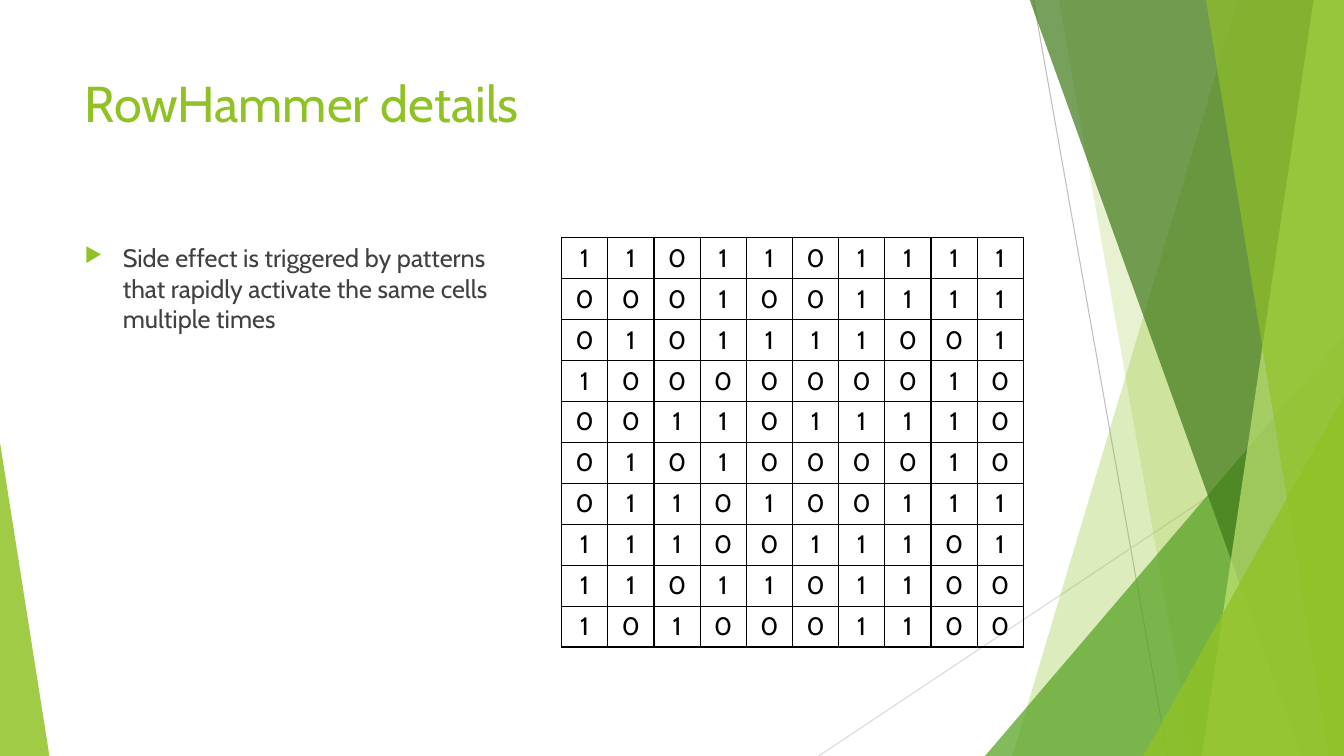
from lxml import etree
from pptx import Presentation
from pptx.dml.color import RGBColor
from pptx.enum.shapes import MSO_CONNECTOR, MSO_SHAPE
from pptx.enum.text import MSO_ANCHOR, PP_ALIGN
from pptx.oxml.ns import qn
from pptx.util import Inches, Pt

STRAIGHT = MSO_CONNECTOR.STRAIGHT
TRIANGLE = MSO_SHAPE.ISOSCELES_TRIANGLE
TOP = MSO_ANCHOR.TOP
LEFT, CENTER = PP_ALIGN.LEFT, PP_ALIGN.CENTER

LIME = RGBColor(0x90, 0xC2, 0x26)
GREEN = RGBColor(0x54, 0xA0, 0x21)
FOREST = RGBColor(0x3F, 0x78, 0x19)
PALE = RGBColor(0xC0, 0xE4, 0x74)
GRAY = RGBColor(0xBF, 0xBF, 0xBF)
LIGHT_GRAY = RGBColor(0xD9, 0xD9, 0xD9)
DARK = RGBColor(0x40, 0x40, 0x40)
BLACK = RGBColor(0, 0, 0)

WIDTH, HEIGHT = 13.33, 7.5
BITS = [
    "1101101111",
    "0001001111",
    "0101111001",
    "1000000010",
    "0011011110",
    "0101000010",
    "0110100111",
    "1110011101",
    "1101101100",
    "1010001100",
]


class SlideBuilder:
    font = "Cabin"

    def __init__(self, slide):
        self.slide = slide
        self.shapes = slide.shapes

    def place(self, sp, x, y, w, h):
        sp.left, sp.top, sp.width, sp.height = map(Inches, (x, y, w, h))

    def run(self, p, text, size, color):
        r = p.add_run()
        r.text = text
        r.font.name = self.font
        r.font.size = Pt(size)
        r.font.color.rgb = color

    def paint(self, sp, color, opacity):
        sp.shadow.inherit = False
        sp.line.fill.background()
        sp.fill.solid()
        sp.fill.fore_color.rgb = color
        clr = sp.fill._xPr.find(qn("a:solidFill"))[0]
        etree.SubElement(clr, qn("a:alpha"), val=str(opacity * 1000))

    def line(self, x1, y1, x2, y2, color):
        c = self.shapes.add_connector(STRAIGHT, *map(Inches, (x1, y1, x2, y2)))
        c.line.color.rgb = color
        c.line.width = Pt(0.75)
        etree.SubElement(c._element.spPr, qn("a:effectLst"))

    def band(self, top_left, bottom_left, color, opacity):
        top = -0.01
        points = [(top_left, top), (WIDTH, top), (WIDTH, HEIGHT), (bottom_left, HEIGHT)]
        points = [(Inches(x), Inches(y)) for x, y in points]
        fb = self.shapes.build_freeform(*points[0])
        fb.add_line_segments(points[1:], close=True)
        self.paint(fb.convert_to_shape(), color, opacity)

    def triangle(self, x, y, w, apex, color, opacity):
        sp = self.shapes.add_shape(TRIANGLE, *map(Inches, (x, y, w, HEIGHT - y)))
        sp.adjustments[0] = apex
        self.paint(sp, color, opacity)

    def title(self, text, x, y, w, h):
        sp = self.shapes.title
        self.place(sp, x, y, w, h)
        tf = sp.text_frame
        tf.word_wrap = True
        tf.vertical_anchor = TOP
        p = tf.paragraphs[0]
        p.alignment = LEFT
        self.run(p, text, 36, LIME)

    def bullet(self, text, x, y, w, h):
        sp = self.shapes.add_textbox(*map(Inches, (x, y, w, h)))
        tf = sp.text_frame
        tf.word_wrap = True
        p = tf.paragraphs[0]
        p.space_before = Pt(10)
        pPr = p._p.get_or_add_pPr()
        pPr.set("marL", str(Inches(0.38)))
        pPr.set("indent", str(-Inches(0.38)))
        bu_clr = etree.SubElement(pPr, qn("a:buClr"))
        etree.SubElement(bu_clr, qn("a:srgbClr"), val=str(LIME))
        etree.SubElement(pPr, qn("a:buSzPct"), val="80000")
        etree.SubElement(pPr, qn("a:buChar"), char="▶")
        self.run(p, text, 18, DARK)

    def borders(self, cell):
        tcPr = cell._tc.get_or_add_tcPr()
        for i, side in enumerate(("lnL", "lnR", "lnT", "lnB")):
            ln = etree.Element(qn("a:" + side), w=str(Pt(1)))
            fill = etree.SubElement(ln, qn("a:solidFill"))
            etree.SubElement(fill, qn("a:srgbClr"), val=str(BLACK))
            tcPr.insert(i, ln)

    def bit_table(self, rows, x, y, w, h):
        n_rows, n_cols = len(rows), len(rows[0])
        frame = self.shapes.add_table(n_rows, n_cols, *map(Inches, (x, y, w, h)))
        table = frame.table
        table.first_row = False
        table.horz_banding = False
        for i, row in enumerate(rows):
            for j, bit in enumerate(row):
                cell = table.cell(i, j)
                cell.fill.background()
                self.borders(cell)
                p = cell.text_frame.paragraphs[0]
                p.alignment = CENTER
                self.run(p, bit, 18, BLACK)


def main():
    prs = Presentation()
    prs.slide_width, prs.slide_height = Inches(WIDTH), Inches(HEIGHT)
    s = SlideBuilder(prs.slides.add_slide(prs.slide_layouts[5]))

    s.line(10.25, 0, 11.58, HEIGHT, GRAY)
    s.line(WIDTH, 4.03, 8.12, HEIGHT, LIGHT_GRAY)
    s.band(12.28, 10.04, LIME, 30)
    s.band(10.5, 11.83, LIME, 20)
    s.triangle(9.77, 3.33, 3.56, 1, GREEN, 72)
    s.band(10.21, 12.91, FOREST, 70)
    s.band(13.03, 11.92, PALE, 70)
    s.band(11.96, 13.18, LIME, 65)
    s.triangle(11.34, 3.93, 1.99, 1, LIME, 80)
    s.triangle(0, 4.39, 0.49, 0, LIME, 85)

    s.title("RowHammer details", 0.74, 0.67, 9.4, 1.44)
    s.bullet(
        "Side effect is triggered by patterns that rapidly activate "
        "the same cells multiple times",
        0.74, 2.36, 4.58, 4.24,
    )
    s.bit_table(BITS, 5.57, 2.36, 4.58, 4.06)
    prs.save("out.pptx")


if __name__ == "__main__":
    main()
